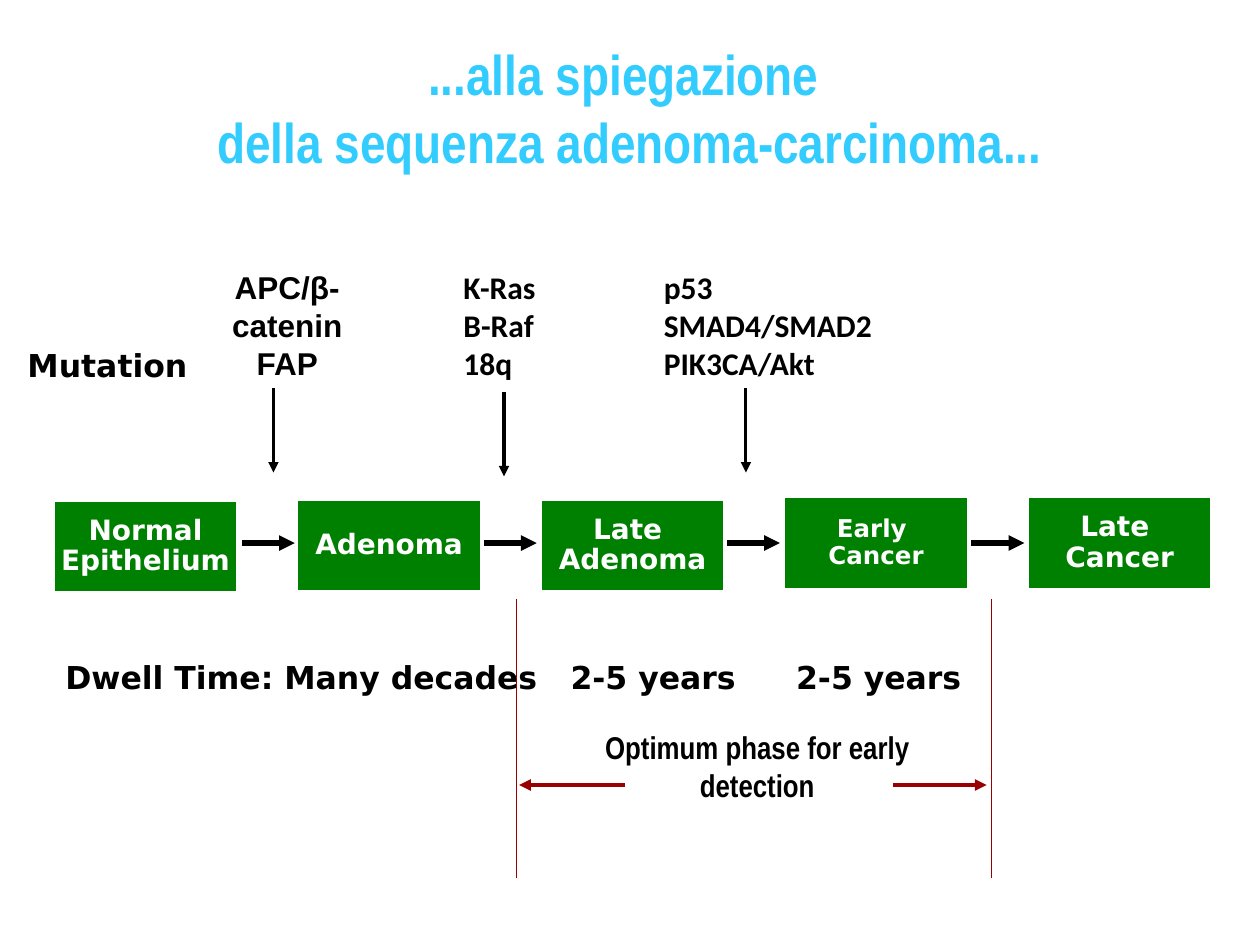
"""Build the adenoma-carcinoma sequence slide."""
from lxml.etree import SubElement
from pptx import Presentation
from pptx.dml.color import RGBColor
from pptx.enum.shapes import MSO_CONNECTOR as Link, MSO_SHAPE as Shape
from pptx.enum.text import MSO_ANCHOR as Anchor, MSO_AUTO_SIZE as Fit, PP_ALIGN as Align
from pptx.oxml.ns import qn
from pptx.util import Inches, Pt

BLACK = RGBColor(0, 0, 0)
WHITE = RGBColor(255, 255, 255)
GREEN = RGBColor(0, 128, 0)
RED = RGBColor(0x99, 0, 0)
SKY = RGBColor(0x33, 0xCC, 0xFF)
SANS = "DejaVu Sans"
NARROW = "Arial Narrow"

TITLE = "...alla spiegazione \vdella sequenza adenoma-carcinoma..."
LABELS = [
    ("Mutation", 0.12, 2.7, 1.6, 0.4, SANS, Align.LEFT),
    ("APC/β-catenin\nFAP", 1.63, 2.08, 1.3, 1, "Arial", Align.CENTER),
    ("K-Ras\nB-Raf\n18q", 3.58, 2.08, 0.92, 1, "Calibri", Align.LEFT),
    ("p53\nSMAD4/SMAD2\nPIK3CA/Akt", 5.17, 2.08, 2.5, 1, "Calibri", Align.LEFT),
    ("Optimum phase for early detection", 4.52, 5.73, 2.98, 0.7, NARROW, Align.CENTER),
]
DWELL = "Dwell Time: Many decades\t2-5 years\t2-5 years"
DWELL_TABS = [4.01, 5.8]
STAGES = [
    ("Normal\nEpithelium", 3.97, 16),
    ("Adenoma", 3.96, 16),
    ("Late \vAdenoma", 3.96, 16),
    ("Early \vCancer", 3.94, 14),
    ("Late \vCancer", 3.94, 16),
]
STAGE_LEFT, STAGE_STEP, STAGE_W, STAGE_H = 0.42, 1.933, 1.47, 0.74
STEPS = [1.92, 3.84, 5.77, 7.71]
STEP_Y, STEP_W = 4.31, 0.42
DROPS = [(2.17, 3.08), (4, 3.11), (5.92, 3.08)]
DROP_H = 0.67
LIMITS = [4.1, 7.87]
SPANS = [(4.96, 4.12), (7.09, 7.83)]


def write(frame, text, face, size, color, align):
    frame.text = text
    for para in frame.paragraphs:
        para.alignment = align
        font = para.font
        font.name, font.size, font.bold = face, Pt(size), True
        font.color.rgb = color


def label(slide, text, left, top, width, height, face, align):
    box = slide.shapes.add_textbox(*map(Inches, (left, top, width, height)))
    box.text_frame.word_wrap = True
    write(box.text_frame, text, face, 18, BLACK, align)
    return box.text_frame


def set_tabs(para, stops):
    props = para._p.get_or_add_pPr()
    tabs = props.makeelement(qn("a:tabLst"), {})
    props.insert(0, tabs)
    for stop in stops:
        SubElement(tabs, qn("a:tab"), pos=str(Inches(stop)), algn="l")


def draw_line(slide, x1, y1, x2, y2, color, width, arrow=True):
    line = slide.shapes.add_connector(Link.STRAIGHT, *map(Inches, (x1, y1, x2, y2)))
    line.line.color.rgb = color
    line.line.width = Pt(width)
    if arrow:
        SubElement(line.line._get_or_add_ln(), qn("a:tailEnd"), type="triangle")
    SubElement(line._element.spPr, qn("a:effectLst"))


def add_stage(slide, text, left, top, size):
    box = slide.shapes.add_shape(
        Shape.RECTANGLE, *map(Inches, (left, top, STAGE_W, STAGE_H)))
    box.shadow.inherit = False
    box.fill.solid()
    box.fill.fore_color.rgb = GREEN
    box.line.color.rgb = WHITE
    box.line.width = Pt(2.25)
    frame = box.text_frame
    frame.word_wrap = False
    frame.vertical_anchor = Anchor.MIDDLE
    write(frame, text, SANS, size, WHITE, Align.CENTER)
    for para in frame.paragraphs:
        para.line_spacing = 0.9


def main():
    deck = Presentation()
    deck.slide_width, deck.slide_height = Inches(10), Inches(7.5)
    slide = deck.slides.add_slide(deck.slide_layouts[5])

    title = slide.shapes.title
    title.left, title.top, title.width, title.height = map(Inches, (0, 0.32, 10, 1.06))
    title.text_frame.auto_size = Fit.NONE
    title.text_frame.vertical_anchor = Anchor.MIDDLE
    write(title.text_frame, TITLE, NARROW, 32, SKY, Align.CENTER)

    for item in LABELS:
        label(slide, *item)
    dwell = label(slide, DWELL, 0.42, 5.17, 9.13, 0.4, SANS, Align.LEFT)
    set_tabs(dwell.paragraphs[0], DWELL_TABS)

    for i, (text, top, size) in enumerate(STAGES):
        add_stage(slide, text, STAGE_LEFT + i * STAGE_STEP, top, size)
    for x in STEPS:
        draw_line(slide, x, STEP_Y, x + STEP_W, STEP_Y, BLACK, 3)
    for x, y in DROPS:
        draw_line(slide, x, y, x, y + DROP_H, BLACK, 1.75)
    for x in LIMITS:
        draw_line(slide, x, 6.97, x, 4.75, RED, 0.75, arrow=False)
    for start, end in SPANS:
        draw_line(slide, start, 6.23, end, 6.23, RED, 2.25)

    deck.save("out.pptx")


if __name__ == "__main__":
    main()
